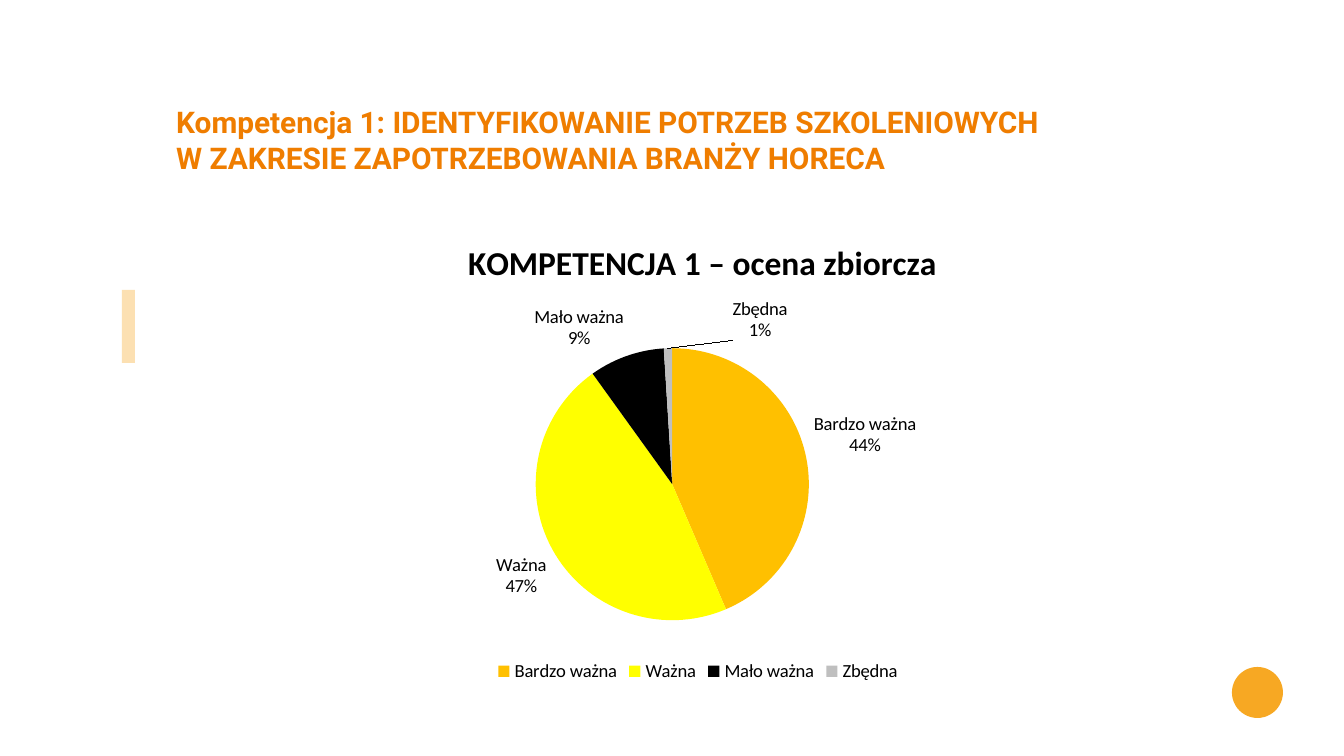
from dataclasses import dataclass

import pptx
import pptx.chart.data
import pptx.dml.color
import pptx.enum.chart
import pptx.enum.shapes
import pptx.oxml
import pptx.oxml.ns
import pptx.util
from lxml import etree

EMU_PER_PX = 914400 / 134.4
COLORS = {
    "heading": "EF7D00",
    "accent": "F7A823",
    "text": "000000",
    "background": "FFFFFF",
}
HEADING = (
    "Kompetencja 1: IDENTYFIKOWANIE POTRZEB SZKOLENIOWYCH\v"
    "W ZAKRESIE ZAPOTRZEBOWANIA BRANŻY HORECA"
)
CHART_TITLE = "KOMPETENCJA 1 – ocena zbiorcza"


@dataclass(frozen=True)
class Box:
    left: int
    top: int
    width: int
    height: int

    def emu(self) -> tuple:
        return tuple(px(n) for n in (self.left, self.top, self.width, self.height))


@dataclass(frozen=True)
class Accent:
    kind: pptx.enum.shapes.MSO_SHAPE
    box: Box
    opacity: int


@dataclass(frozen=True)
class Rating:
    name: str
    percent: int
    color: str


ACCENTS = [
    Accent(pptx.enum.shapes.MSO_SHAPE.RECTANGLE, Box(122, 290, 13, 73), 35),
    Accent(pptx.enum.shapes.MSO_SHAPE.OVAL, Box(1232, 667, 51, 51), 100),
]
RATINGS = [
    Rating("Bardzo ważna", 44, "FFC000"),
    Rating("Ważna", 47, "FFFF00"),
    Rating("Mało ważna", 9, "000000"),
    Rating("Zbędna", 1, "BFBFBF"),
]


def px(length: int) -> int:
    return round(length * EMU_PER_PX)


def rgb(hex_color: str) -> pptx.dml.color.RGBColor:
    return pptx.dml.color.RGBColor.from_string(hex_color)


def style_font(font, name: str, size: int, color: str, bold: bool = False) -> None:
    font.name = name
    font.size = pptx.util.Pt(size)
    font.bold = bold
    font.color.rgb = rgb(color)


def add_accent(page, accent: Accent) -> None:
    shape = page.shapes.add_shape(accent.kind, *accent.box.emu())
    shape.shadow.inherit = False
    shape.fill.solid()
    shape.fill.fore_color.rgb = rgb(COLORS["accent"])
    shape.line.fill.background()
    if accent.opacity < 100:
        color = shape.element.xpath("./p:spPr/a:solidFill/a:srgbClr")[0]
        alpha = etree.SubElement(color, pptx.oxml.ns.qn("a:alpha"))
        alpha.set("val", str(accent.opacity * 1000))


def add_heading(page, box: Box) -> None:
    frame = page.shapes.add_textbox(*box.emu()).text_frame
    frame.word_wrap = True
    frame.text = HEADING
    for span in frame.paragraphs[0].runs:
        style_font(span.font, "Roboto", 16, COLORS["heading"], bold=True)


def set_layout(parent, index: int, inner: bool = False, **fractions: float) -> None:
    """Place a chart part by fractions of the chart's size."""
    for old in parent.findall(pptx.oxml.ns.qn("c:layout")):
        parent.remove(old)
    layout = etree.Element(pptx.oxml.ns.qn("c:layout"))
    manual = etree.SubElement(layout, pptx.oxml.ns.qn("c:manualLayout"))
    settings = {"layoutTarget": "inner", "xMode": "edge", "yMode": "edge"} if inner else {}
    for name, value in {**settings, **fractions}.items():
        etree.SubElement(manual, pptx.oxml.ns.qn(f"c:{name}")).set("val", str(value))
    parent.insert(index, layout)


def label_slices(series) -> None:
    position = pptx.enum.chart.XL_LABEL_POSITION.OUTSIDE_END
    labels = series.data_labels
    labels.show_percentage = True
    labels.show_category_name = True
    labels.show_value = False
    labels.position = position
    last = len(RATINGS) - 1
    series.points[last].data_label.position = position

    single = series._element.xpath("./c:dLbls/c:dLbl")[0]
    set_layout(single, 1, x=0.09, y=0)
    for name, shown in (("showVal", "0"), ("showCatName", "1"), ("showPercent", "1")):
        single.find(pptx.oxml.ns.qn(f"c:{name}")).set("val", shown)
    for flag in series._element.xpath("./c:dLbls//c:showBubbleSize | ./c:dLbls/c:dLbl[not(c:showBubbleSize)]/c:showPercent"):
        separator = etree.Element(pptx.oxml.ns.qn("c:separator"))
        separator.text = "\n"
        flag.addnext(separator)


def add_chart_frame(chart) -> None:
    """Give the whole chart area its fill and border."""
    color = f'<a:solidFill><a:srgbClr val="{COLORS["background"]}"/></a:solidFill>'
    frame = pptx.oxml.parse_xml(
        f'<c:spPr {pptx.oxml.ns.nsdecls("c", "a")}>{color}'
        f'<a:ln w="{pptx.util.Pt(2)}">{color}</a:ln></c:spPr>'
    )
    chart.element.find(pptx.oxml.ns.qn("c:chart")).addnext(frame)


def add_ratings_chart(page, box: Box) -> None:
    data = pptx.chart.data.CategoryChartData()
    data.categories = [rating.name for rating in RATINGS]
    data.add_series("Series 1", [rating.percent for rating in RATINGS])
    chart = page.shapes.add_chart(
        pptx.enum.chart.XL_CHART_TYPE.PIE, *box.emu(), data
    ).chart
    style_font(chart.font, "Calibri", 10, COLORS["text"])
    add_chart_frame(chart)

    chart.has_title = True
    title = chart.chart_title
    title.text_frame.text = CHART_TITLE
    span = title.text_frame.paragraphs[0].runs[0]
    style_font(span.font, "Calibri", 18, COLORS["text"], bold=True)
    element = chart.element.xpath("./c:chart/c:title")[0]
    set_layout(element, 1, xMode="edge", yMode="edge", x=0.27, y=0.05)

    chart.has_legend = True
    chart.legend.position = pptx.enum.chart.XL_LEGEND_POSITION.BOTTOM
    chart.legend.include_in_layout = False

    plot = chart.plots[0]
    plot.vary_by_categories = True
    series = plot.series[0]
    for index, rating in enumerate(RATINGS):
        fill = series.points[index].format.fill
        fill.solid()
        fill.fore_color.rgb = rgb(rating.color)
    label_slices(series)
    area = chart.element.xpath("./c:chart/c:plotArea")[0]
    set_layout(area, 0, inner=True, x=0.34, y=0.29, w=0.27, h=0.57)


def main() -> None:
    deck = pptx.Presentation()
    deck.slide_width, deck.slide_height = px(1344), px(756)
    page = deck.slides.add_slide(deck.slide_layouts[6])
    for accent in ACCENTS:
        add_accent(page, accent)
    add_heading(page, Box(163, 97, 1155, 149))
    add_ratings_chart(page, Box(183, 208, 1030, 481))
    deck.save("out.pptx")


if __name__ == "__main__":
    main()
